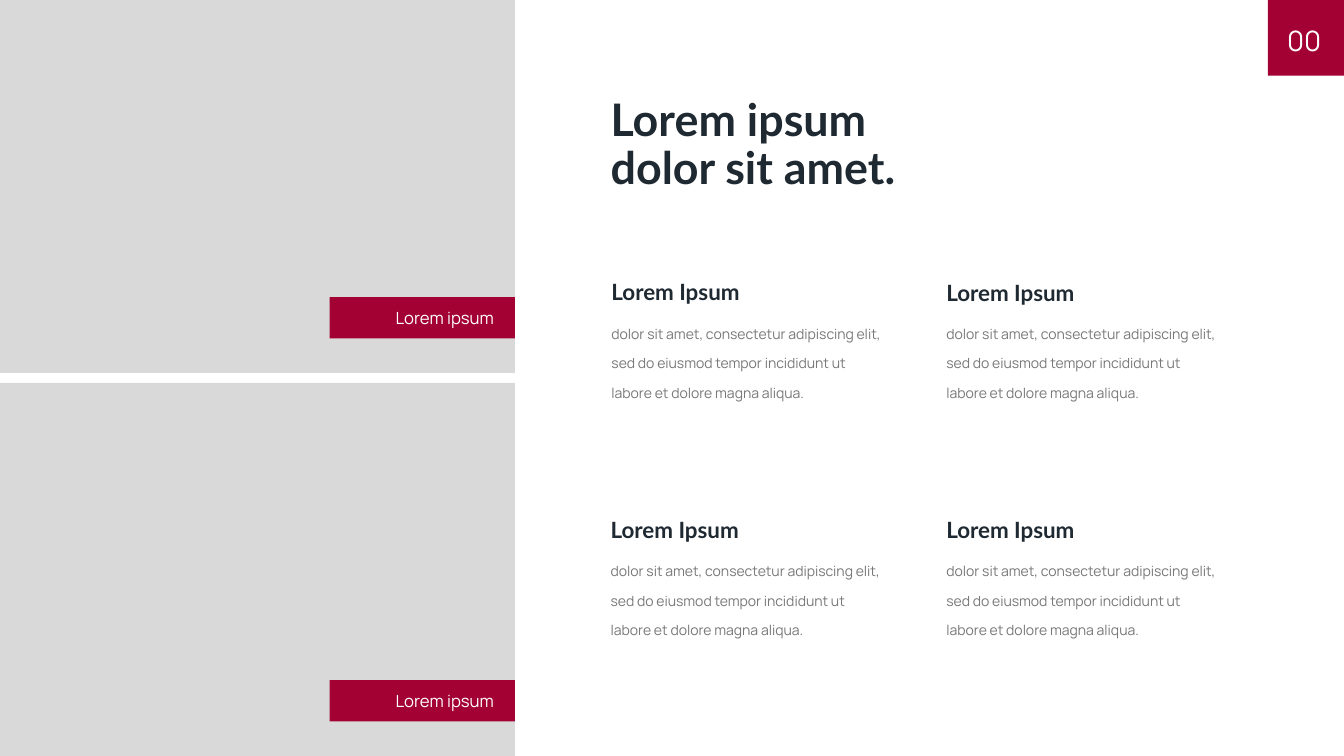
from dataclasses import dataclass

from pptx import Presentation
from pptx.dml.color import RGBColor
from pptx.enum.shapes import MSO_SHAPE
from pptx.enum.text import MSO_ANCHOR, MSO_AUTO_SIZE, PP_ALIGN
from pptx.util import Cm, Pt

RECT = MSO_SHAPE.RECTANGLE
MIDDLE, TOP = MSO_ANCHOR.MIDDLE, MSO_ANCHOR.TOP
LEFT, RIGHT = PP_ALIGN.LEFT, PP_ALIGN.RIGHT
GROW, FIXED = MSO_AUTO_SIZE.SHAPE_TO_FIT_TEXT, MSO_AUTO_SIZE.NONE

GREY, RED, WHITE = "D9D9D9", "A30134", "FFFFFF"
DARK, MUTED = "1F2932", "787878"
BODY = ("dolor sit amet, consectetur adipiscing elit, sed do eiusmod "
        "tempor incididunt ut labore et dolore magna aliqua.")


@dataclass(frozen=True)
class Box:
    """Position and size in centimetres."""
    x: float
    y: float
    w: float
    h: float


@dataclass(frozen=True)
class Style:
    font: str
    size: float
    color: str
    bold: bool = False
    align: PP_ALIGN = LEFT
    spacing: float = 1.0


@dataclass(frozen=True)
class Section:
    x: float
    heading_y: float
    body_y: float


TITLE = Style("Lato", 32, DARK, bold=True, spacing=0.9)
HEADING = Style("Lato", 16, DARK, bold=True)
PARAGRAPH = Style("Manrope", 10, MUTED, spacing=1.75)
CAPTION = Style("Manrope", 12, WHITE, align=RIGHT)
NUMBER = Style("Manrope", 20, WHITE, align=RIGHT)


def rgb(color: str) -> RGBColor:
    return RGBColor.from_string(color)


def add_rect(s, box: Box, color: str) -> None:
    sp = s.shapes.add_shape(RECT, Cm(box.x), Cm(box.y), Cm(box.w), Cm(box.h))
    sp.shadow.inherit = False
    sp.fill.solid()
    sp.fill.fore_color.rgb = rgb(color)
    sp.line.fill.background()


def add_text(s, box: Box, lines: list[str], style: Style, tight: bool = False) -> None:
    """Write one paragraph per line; a tight box has no insets and a fixed size."""
    sp = s.shapes.add_textbox(Cm(box.x), Cm(box.y), Cm(box.w), Cm(box.h))
    tf = sp.text_frame
    tf.word_wrap = True
    tf.auto_size = FIXED if tight else GROW
    tf.vertical_anchor = MIDDLE if tight else TOP
    if tight:
        tf.margin_left = tf.margin_top = tf.margin_right = tf.margin_bottom = 0
    for i, line in enumerate(lines):
        p = tf.add_paragraph() if i else tf.paragraphs[0]
        p.alignment = style.align
        p.line_spacing = style.spacing
        r = p.add_run()
        r.text = line
        r.font.name = style.font
        r.font.size = Pt(style.size)
        r.font.bold = style.bold
        r.font.color.rgb = rgb(style.color)


def main() -> None:
    prs = Presentation()
    prs.slide_width, prs.slide_height = Cm(33.87), Cm(19.05)
    s = prs.slides.add_slide(prs.slide_layouts[6])

    # Grey panels with their caption tags
    for y in (0, 9.65):
        add_rect(s, Box(0, y, 12.98, 9.4), GREY)
        add_rect(s, Box(8.31, y + 7.49, 4.67, 1.04), RED)
        add_text(s, Box(8.61, y + 7.62, 4.09, 0.76), ["Lorem ipsum"], CAPTION)

    # Page number
    add_rect(s, Box(31.95, 0, 1.92, 1.91), RED)
    add_text(s, Box(31.9, 0.15, 1.4, 1.75), ["00"], NUMBER, tight=True)

    # Title
    add_text(s, Box(15.14, 2.34, 15.8, 2.74), ["Lorem ipsum", "dolor sit amet."], TITLE)

    # Four text sections
    sections = [
        Section(15.16, 6.88, 7.75), Section(23.6, 6.91, 7.75),
        Section(15.14, 12.88, 13.74), Section(23.6, 12.88, 13.74),
    ]
    for section in sections:
        add_text(s, Box(section.x, section.body_y, 7.34, 2.41), [BODY], PARAGRAPH)
        add_text(s, Box(section.x, section.heading_y, 7.34, 0.94), ["Lorem Ipsum"], HEADING)

    prs.save("out.pptx")


if __name__ == "__main__":
    main()
